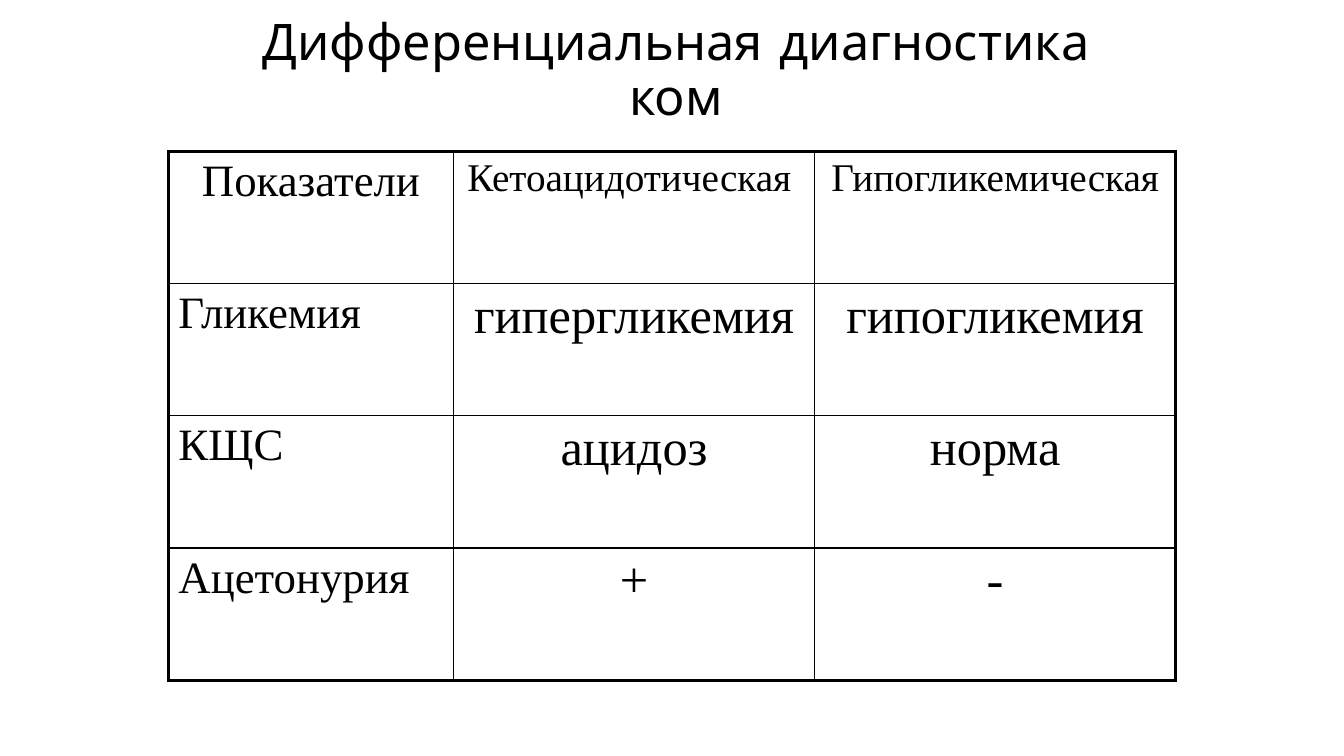
from lxml import etree
from pptx import Presentation
from pptx.dml.color import RGBColor
from pptx.enum.text import MSO_ANCHOR, MSO_AUTO_SIZE, PP_ALIGN
from pptx.oxml.ns import qn
from pptx.util import Inches, Pt

BLACK = RGBColor(0, 0, 0)
LEFT, CENTER = PP_ALIGN.LEFT, PP_ALIGN.CENTER
MIDDLE = MSO_ANCHOR.MIDDLE
NO_FIT = MSO_AUTO_SIZE.NONE
THIN, THICK = Pt(1), Pt(2.25)

TITLE = "Дифференциальная диагностика ком"
ROWS = [
    ["Показатели", "Кетоацидотическая ", "Гипогликемическая"],
    ["Гликемия", "гипергликемия", "гипогликемия"],
    ["КЩС", "ацидоз", "норма"],
    ["Ацетонурия", "+", "-"],
]
WIDTHS = [2.83, 3.58, 3.58]
HEIGHT = 5.25


class Deck:
    title_font = "Comic Neue"
    body_font = "Times New Roman"

    def __init__(self, prs):
        self.slide = prs.slides.add_slide(prs.slide_layouts[5])

    def label(self, frame, text, font, size, align):
        para = frame.paragraphs[0]
        para.alignment = align
        run = para.add_run()
        run.text = text
        style = {"name": font, "size": Pt(size), "bold": False}
        for key, value in style.items():
            setattr(run.font, key, value)
        run.font.color.rgb = BLACK
        return para

    def title(self, text, left, top, width, height):
        shape = self.slide.shapes.title
        place = {"left": left, "top": top, "width": width, "height": height}
        for key, value in place.items():
            setattr(shape, key, Inches(value))
        frame = shape.text_frame
        form = {"word_wrap": True, "auto_size": NO_FIT, "vertical_anchor": MIDDLE}
        for key, value in form.items():
            setattr(frame, key, value)
        para = self.label(frame, text, self.title_font, 36, CENTER)
        para.line_spacing = 0.9

    def edges(self, cell, sides):
        props = cell._tc.get_or_add_tcPr()
        for i, (side, width) in enumerate(sides.items()):
            line = etree.Element(qn("a:ln" + side), w=str(width))
            fill = etree.SubElement(line, qn("a:solidFill"))
            etree.SubElement(fill, qn("a:srgbClr"), val=str(BLACK))
            props.insert(i, line)

    def table(self, rows, widths, left, top, height):
        last_row, last_col = len(rows) - 1, len(widths) - 1
        table = self.slide.shapes.add_table(
            len(rows), len(widths), Inches(left), Inches(top),
            Inches(sum(widths)), Inches(height)).table
        for flag in ("first_row", "horz_banding"):
            setattr(table, flag, False)
        for col, width in zip(table.columns, widths):
            col.width = Inches(width)
        for r, texts in enumerate(rows):
            for c, text in enumerate(texts):
                cell = table.cell(r, c)
                cell.fill.background()
                # Thick frame outside, thin lines inside
                self.edges(cell, {
                    "L": THICK if c == 0 else THIN,
                    "R": THICK if c == last_col else THIN,
                    "T": THICK if r == 0 else THIN,
                    "B": THICK if r == last_row else THIN,
                })
                size = 32 if c == 0 else 28 if r == 0 else 36
                align = LEFT if c == 0 and r > 0 else CENTER
                self.label(cell.text_frame, text, self.body_font, size, align)


def main():
    prs = Presentation()
    prs.slide_width, prs.slide_height = Inches(13.33), Inches(7.5)
    deck = Deck(prs)

    # Heading
    deck.title(TITLE, 2.08, 0.25, 9.25, 0.92)

    # Comparison of comas
    deck.table(ROWS, WIDTHS, 1.67, 1.5, HEIGHT)

    prs.save("out.pptx")


if __name__ == "__main__":
    main()
